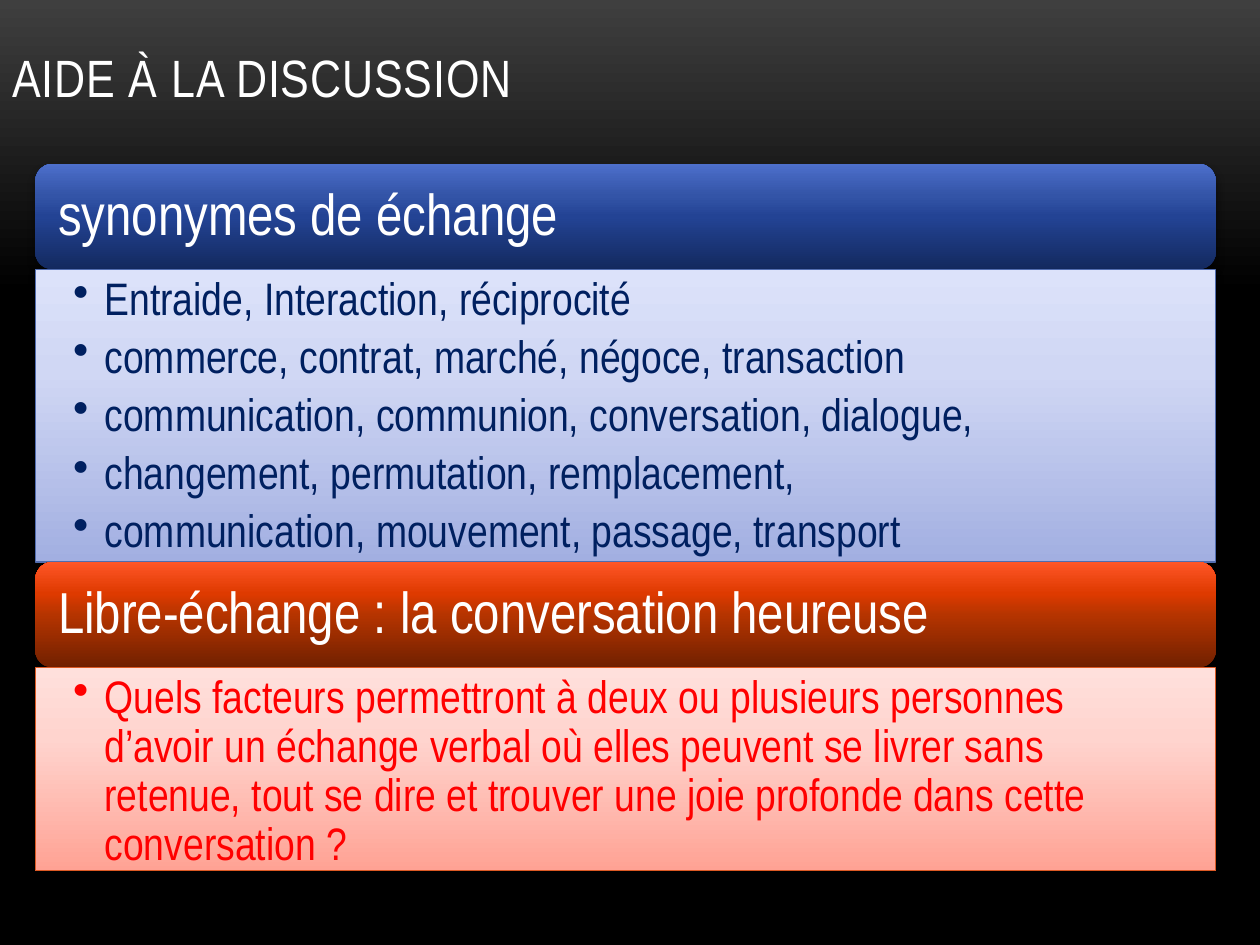
from dataclasses import dataclass

from lxml import etree
from pptx import Presentation
from pptx.dml.color import RGBColor
from pptx.enum.shapes import MSO_SHAPE
from pptx.enum.text import MSO_ANCHOR, PP_ALIGN
from pptx.oxml.ns import qn
from pptx.util import Inches, Pt

ROUNDED, RECTANGLE = MSO_SHAPE.ROUNDED_RECTANGLE, MSO_SHAPE.RECTANGLE
TOP, MIDDLE, BOTTOM = MSO_ANCHOR.TOP, MSO_ANCHOR.MIDDLE, MSO_ANCHOR.BOTTOM
LEFT = PP_ALIGN.LEFT

FONT = "Arial Narrow"
COLORS = {"white": "FFFFFF", "navy": "002060", "red": "FF0000", "shadow": "000000",
          "blue_line": "526DB0", "orange_line": "DC5924"}

# Gradient stops: (position in percent, colour)
BACKDROP = [(0, "3F3F3F"), (31, "000000"), (100, "000000")]
BLUE_HEADER = [(0, "13295E"), (50, "234394"), (70, "3354A7"), (100, "4D6FCB")]
BLUE_PANEL = [(0, "A2AFE1"), (65, "D0D7F4"), (100, "DCE2FA")]
ORANGE_HEADER = [(0, "702000"), (50, "B53400"), (70, "DE3A00"), (100, "FF5627")]
ORANGE_PANEL = [(0, "FFA294"), (65, "FFD4CE"), (100, "FFE0DC")]

BAND_LEFT, BAND_WIDTH, FIRST_TOP, HEADER_HEIGHT = 0.28, 9.37, 1.3, 0.84


@dataclass
class Section:
    heading: str
    items: list[str]
    header_stops: list
    panel_stops: list
    line_color: str
    text_color: str
    panel_height: float
    header_shadow: tuple = (35, 4, 3)


SECTIONS = [
    Section("synonymes de échange",
            ["Entraide, Interaction, réciprocité",
             "commerce, contrat, marché, négoce, transaction",
             "communication, communion, conversation, dialogue,",
             "changement, permutation, remplacement, ",
             "communication, mouvement, passage, transport"],
            BLUE_HEADER, BLUE_PANEL, "blue_line", "navy", 2.32, (45, 5, 3)),
    Section("Libre-échange : la conversation heureuse",
            ["Quels facteurs permettront à deux ou plusieurs personnes d’avoir un "
             "échange verbal où elles peuvent se livrer sans retenue, tout se dire et "
             "trouver une joie profonde dans cette conversation ?"],
            ORANGE_HEADER, ORANGE_PANEL, "orange_line", "red", 1.61),
]


def add_color(parent, color: str):
    return etree.SubElement(parent, qn("a:srgbClr"), val=color)


def set_gradient(fill, element, stops: list, angle: int) -> None:
    fill.gradient()
    gradient = element.find(".//" + qn("a:gradFill"))
    for child in list(gradient):
        gradient.remove(child)
    stop_list = etree.SubElement(gradient, qn("a:gsLst"))
    for position, color in stops:
        add_color(etree.SubElement(stop_list, qn("a:gs"), pos=str(position * 1000)), color)
    etree.SubElement(gradient, qn("a:lin"), ang=str(angle * 60000), scaled="0")


def set_shadow(shape, opacity: int, blur: float, distance: float) -> None:
    shape.shadow.inherit = False
    effects = shape._element.spPr.find(qn("a:effectLst"))
    shadow = etree.SubElement(effects, qn("a:outerShdw"), blurRad=str(Pt(blur)),
                              dist=str(Pt(distance)), dir="5400000", rotWithShape="0")
    etree.SubElement(add_color(shadow, COLORS["shadow"]), qn("a:alpha"),
                     val=str(opacity * 1000))


def write_text(shape, lines: list[str], *, size: float, color: str, anchor,
               insets: tuple = (0.1, 0.05, 0.1, 0.05), bullets: bool = False,
               line_spacing: float = 0.9, tracking: float = 0) -> None:
    frame = shape.text_frame
    frame.word_wrap = True
    frame.vertical_anchor = anchor
    (frame.margin_left, frame.margin_top,
     frame.margin_right, frame.margin_bottom) = map(Inches, insets)
    for index, line in enumerate(lines):
        para = frame.add_paragraph() if index else frame.paragraphs[0]
        para.alignment = LEFT
        para.line_spacing = line_spacing
        if bullets:
            para.space_after = Pt(size * 0.2)
            properties = para._p.get_or_add_pPr()
            properties.set("marL", str(Inches(0.25)))
            properties.set("indent", str(Inches(-0.25)))
            etree.SubElement(properties, qn("a:buChar"), char="•")
        span = para.add_run()
        span.text = line
        span.font.name = FONT
        span.font.size = Pt(size)
        span.font.color.rgb = RGBColor.from_string(COLORS[color])
        if tracking:
            span.font._element.set("spc", str(int(tracking * 100)))


def add_band(page, kind, top: float, height: float, stops: list, shadow: tuple,
             line_color: str = ""):
    band = page.shapes.add_shape(kind, Inches(BAND_LEFT), Inches(top),
                                 Inches(BAND_WIDTH), Inches(height))
    set_gradient(band.fill, band._element, stops, 270)
    if line_color:
        band.line.color.rgb = RGBColor.from_string(COLORS[line_color])
        band.line.width = Pt(0.75)
    else:
        band.line.fill.background()
    set_shadow(band, *shadow)
    return band


def add_section(page, section: Section, top: float) -> float:
    """Draw a header with its panel and return the bottom edge."""
    header = add_band(page, ROUNDED, top, HEADER_HEIGHT, section.header_stops,
                      section.header_shadow)
    write_text(header, [section.heading], size=33, color="white", anchor=MIDDLE,
               insets=(0.14,) * 4)
    panel_top = top + HEADER_HEIGHT
    panel = add_band(page, RECTANGLE, panel_top, section.panel_height,
                     section.panel_stops, (35, 4, 3), section.line_color)
    write_text(panel, section.items, size=26, color=section.text_color, anchor=TOP,
               insets=(0.3, 0.05, 0.26, 0.05), bullets=True)
    return panel_top + section.panel_height


def main() -> None:
    deck = Presentation()
    deck.slide_width, deck.slide_height = Inches(10), Inches(7.5)
    page = deck.slides.add_slide(deck.slide_layouts[6])
    set_gradient(page.background.fill, page._element, BACKDROP, 90)

    # Title
    title = page.shapes.add_textbox(0, 0, Inches(10), Inches(0.91))
    write_text(title, ["AIDE À LA DISCUSSION"], size=30, color="white", anchor=BOTTOM,
               line_spacing=1.0, tracking=0.5)

    # Stacked sections
    top = FIRST_TOP
    for section in SECTIONS:
        top = add_section(page, section, top)

    deck.save("out.pptx")


if __name__ == "__main__":
    main()
